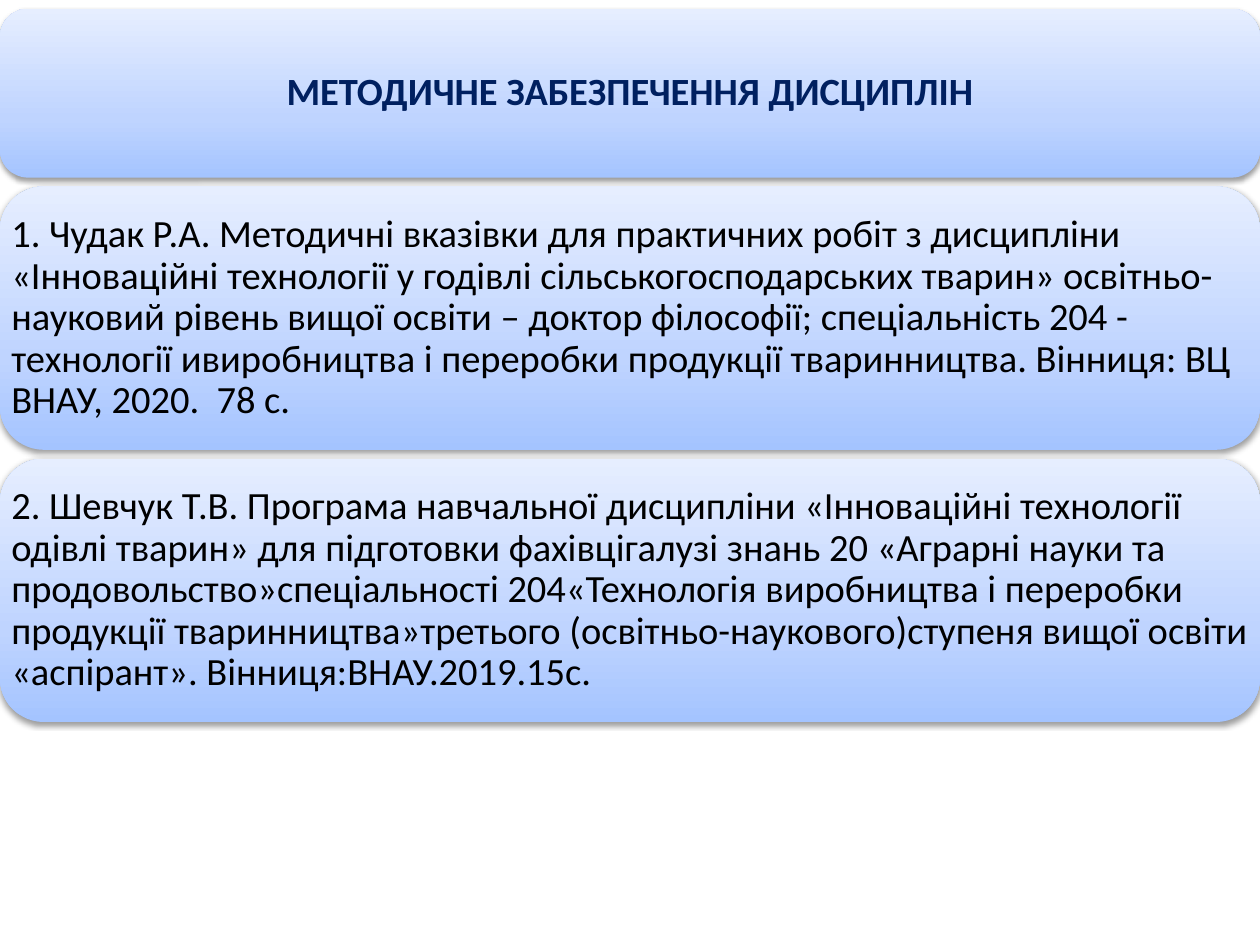
from copy import deepcopy

from lxml import etree
from pptx import Presentation
from pptx.dml.color import RGBColor
from pptx.enum import shapes, text
from pptx.oxml import ns
from pptx.util import Inches, Pt

TITLE = "МЕТОДИЧНЕ ЗАБЕЗПЕЧЕННЯ ДИСЦИПЛІН"
SOURCES = [
    "1. Чудак Р.А. Методичні вказівки для практичних робіт з дисципліни "
    "«Інноваційні технології у годівлі сільськогосподарських тварин» "
    "освітньо-науковий рівень вищої освіти – доктор філософії; спеціальність 204 - "
    "технології ивиробництва і переробки продукції тваринництва. "
    "Вінниця: ВЦ ВНАУ, 2020.  78 с.",
    "2. Шевчук Т.В. Програма навчальної дисципліни «Інноваційні технології одівлі "
    "тварин» для підготовки фахівцігалузі знань 20 «Аграрні науки та "
    "продовольство»спеціальності 204«Технологія виробництва і переробки продукції "
    "тваринництва»третього (освітньо-наукового)ступеня вищої освіти «аспірант». "
    "Вінниця:ВНАУ.2019.15с.",
]
STOPS = [(0, "A4C4FF"), (0.35, "BFD4FF"), (1, "E6EEFF")]
WIDTH, TOP, GAP = 10, 0.07, 0.07
TITLE_HEIGHT, SOURCE_HEIGHT = 1.34, 2.09


def rgb(value):
    """Return the colour for a hex string."""
    return RGBColor.from_string(value)


def set_gradient(sp):
    """Fill a shape with the blue gradient, darkest at the bottom."""
    sp.fill.gradient()
    sp.fill.gradient_angle = 90
    gs = sp._element.spPr.findall(".//" + ns.qn("a:gs"))[-1]
    gs.addnext(deepcopy(gs))
    for stop, (position, colour) in zip(sp.fill.gradient_stops, STOPS):
        stop.position = position
        stop.color.rgb = rgb(colour)


def set_shadow(sp):
    """Give a shape a soft black shadow below it."""
    sp.shadow.inherit = False
    effects = sp._element.spPr.find(ns.qn("a:effectLst"))
    shadow = etree.SubElement(effects, ns.qn("a:outerShdw"), blurRad=str(Pt(3.1)),
                              dist=str(Pt(1.6)), dir="5400000", rotWithShape="0")
    colour = etree.SubElement(shadow, ns.qn("a:srgbClr"), val="000000")
    etree.SubElement(colour, ns.qn("a:alpha"), val="38000")


def add_panel(s, top, height):
    """Add a full-width rounded panel."""
    sp = s.shapes.add_shape(shapes.MSO_SHAPE.ROUNDED_RECTANGLE, 0, Inches(top),
                            Inches(WIDTH), Inches(height))
    set_gradient(sp)
    sp.line.fill.background()
    set_shadow(sp)


def add_text(s, top, height, words, colour, bold, align):
    """Add the words of a panel, centred vertically."""
    tf = s.shapes.add_textbox(0, Inches(top), Inches(WIDTH), Inches(height)).text_frame
    tf.word_wrap = True
    tf.vertical_anchor = text.MSO_ANCHOR.MIDDLE
    tf.margin_left = tf.margin_right = tf.margin_top = tf.margin_bottom = Inches(0.09)
    p = tf.paragraphs[0]
    p.text = words
    p.alignment = align
    p.line_spacing = 0.9
    p.font.name = "Calibri"
    p.font.size = Pt(22)
    p.font.bold = bold
    p.font.color.rgb = rgb(colour)


def main():
    """Build and save the slide."""
    prs = Presentation()
    prs.slide_width, prs.slide_height = Inches(WIDTH), Inches(7.5)
    s = prs.slides.add_slide(prs.slide_layouts[6])
    panels = [(TITLE_HEIGHT, TITLE, "002060", True, text.PP_ALIGN.CENTER)]
    panels += [(SOURCE_HEIGHT, source, "000000", False, text.PP_ALIGN.LEFT)
               for source in SOURCES]
    top = TOP
    for height, *style in panels:
        add_panel(s, top, height)
        add_text(s, top, height, *style)
        top += height + GAP
    prs.save("out.pptx")


if __name__ == "__main__":
    main()
